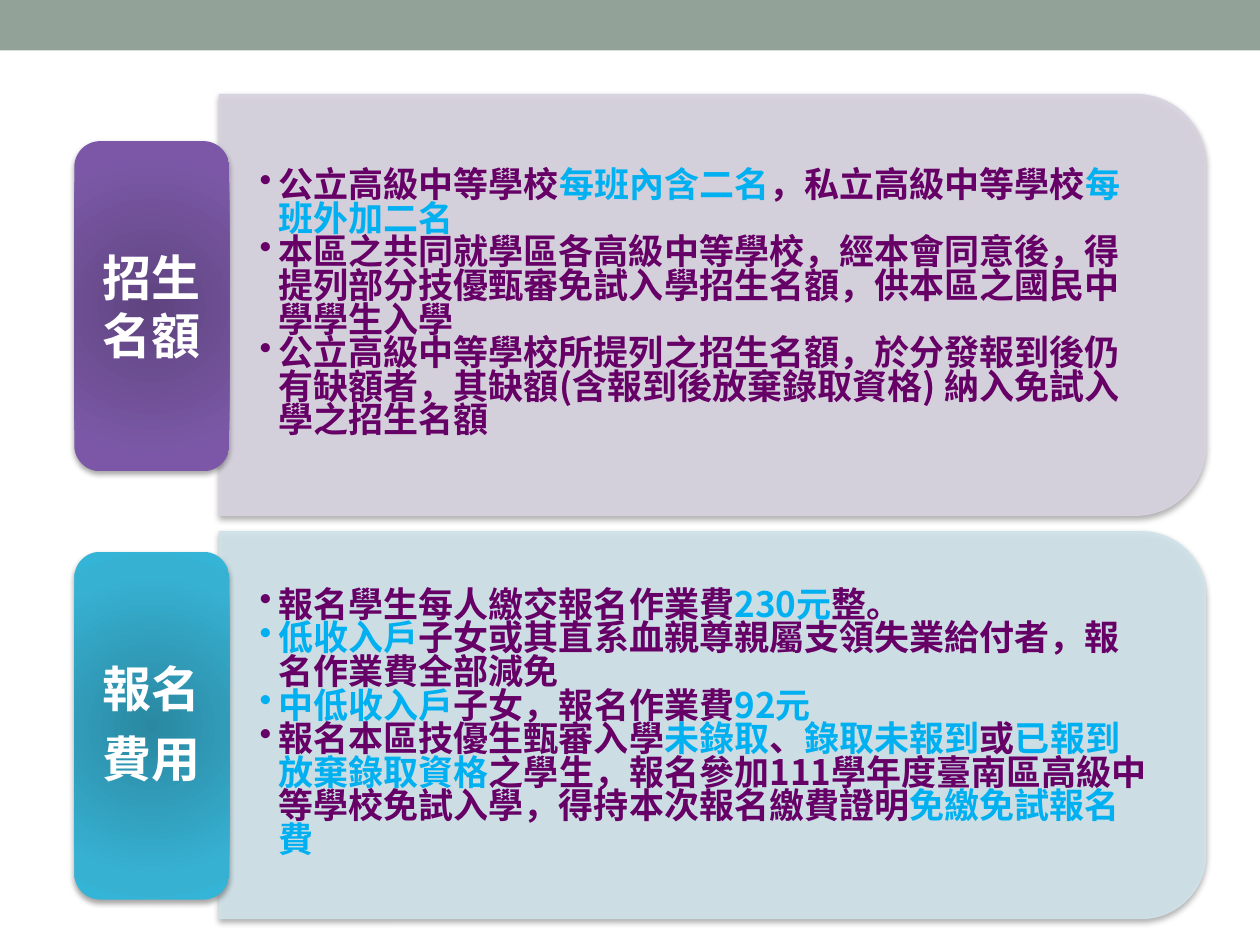
from pptx import Presentation
from pptx.dml.color import RGBColor
from pptx.enum.shapes import MSO_SHAPE
from pptx.enum.text import MSO_ANCHOR, PP_ALIGN
from pptx.oxml import parse_xml
from pptx.oxml.ns import nsdecls, qn
from pptx.util import Inches, Pt

RECTANGLE = MSO_SHAPE.RECTANGLE
ROUNDED = MSO_SHAPE.ROUNDED_RECTANGLE
TOP_ROUNDED = MSO_SHAPE.ROUND_2_SAME_RECTANGLE
MIDDLE = MSO_ANCHOR.MIDDLE
CENTER = PP_ALIGN.CENTER
FONT = "Noto Sans CJK SC"
PLUM, SKY, WHITE = "660066", "00B0F0", "FFFFFF"


def color(value):
    return RGBColor.from_string(value)


def add_text(page, area, inset, paragraphs, size, formats, bulleted=False):
    """Add a text box; each paragraph is a list of (text, colour) spans."""
    box = page.shapes.add_textbox(*map(Inches, area))
    frame = box.text_frame
    frame_format = {
        "word_wrap": True, "vertical_anchor": MIDDLE,
        "margin_left": Inches(inset), "margin_right": Inches(inset),
        "margin_top": Inches(inset / 2), "margin_bottom": Inches(inset / 2),
    }
    for name, value in frame_format.items():
        setattr(frame, name, value)
    for index, spans in enumerate(paragraphs):
        para = frame.add_paragraph() if index else frame.paragraphs[0]
        for name, value in formats.items():
            setattr(para, name, value)
        if bulleted:
            props = para._p.get_or_add_pPr()
            props.set("marL", str(Inches(0.19)))
            props.set("indent", str(Inches(-0.15)))
            props.append(parse_xml(f'<a:buChar {nsdecls("a")} char="•"/>'))
        for text, tone in spans:
            span = para.add_run()
            span.text = text
            for name, value in {"name": FONT, "size": Pt(size), "bold": True}.items():
                setattr(span.font, name, value)
            span.font.color.rgb = color(tone)
            span._r.rPr.append(parse_xml(f'<a:ea {nsdecls("a")} typeface="{FONT}"/>'))


deck = Presentation()
deck.slide_width, deck.slide_height = Inches(10), Inches(7.5)
page = deck.slides.add_slide(deck.slide_layouts[6])

# Top band
band = page.shapes.add_shape(RECTANGLE, 0, 0, Inches(10), Inches(0.4))
band.shadow.inherit = False
band.fill.solid()
band.fill.fore_color.rgb = color("93A299")
band.line.fill.background()

# Two sections: a tinted panel with bullets and a gradient label
sections = [
    {
        "panel_top": 0.75, "panel_height": 3.34, "tint": "D8D3E0",
        "text_area": (1.75, 0.92, 7.67, 3.01),
        "label_top": 1.12, "label_height": 2.62,
        "stops": [(0, "5F4480"), (80, "7B58A6"), (100, "7C57A8")],
        "label": ["招生", "名額"],
        "label_format": {"alignment": CENTER, "line_spacing": Pt(33)},
        "bullets": [
            [("公立高級中等學校", PLUM), ("每班內含二名", SKY),
             ("，私立高級中等學校", PLUM), ("每班外加二名", SKY)],
            [("本區之共同就學區各高級中等學校，經本會同意後，得提列部分技優甄審"
              "免試入學招生名額，供本區之國民中學學生入學", PLUM)],
            [("公立高級中等學校所提列之招生名額，於分發報到後仍有缺額者，其缺額"
              "(含報到後放棄錄取資格) 納入免試入學之招生名額", PLUM)],
        ],
    },
    {
        "panel_top": 4.22, "panel_height": 3.07, "tint": "D0E3EA",
        "text_area": (1.75, 4.37, 7.68, 2.77),
        "label_top": 4.38, "label_height": 2.76,
        "stops": [(0, "2A88A2"), (80, "37B1D2"), (100, "34B4D6")],
        "label": ["報名", "費用"],
        "label_format": {"alignment": CENTER, "line_spacing": Pt(30),
                         "space_after": Pt(10)},
        "bullets": [
            [("報名學生每人繳交報名作業費", PLUM), ("230元", SKY), ("整。", PLUM)],
            [("低收入戶", SKY),
             ("子女或其直系血親尊親屬支領失業給付者，報名作業費全部減免", PLUM)],
            [("中低收入戶", SKY), ("子女，報名作業費", PLUM), ("92元", SKY)],
            [("報名本區技優生甄審入學", PLUM), ("未錄取", SKY), ("、", PLUM),
             ("錄取未報到", SKY), ("或", PLUM), ("已報到放棄錄取資格", SKY),
             ("之學生，報名參加111學年度臺南區高級中等學校免試入學，"
              "得持本次報名繳費證明", PLUM), ("免繳免試報名費", SKY)],
        ],
    },
]
panel_left, panel_width = 1.74, 7.83
label_left, label_width, label_pad = 0.59, 1.23, 0.06

for section in sections:
    # Panel: a top-rounded shape turned a quarter, so its round side faces right
    height = section["panel_height"]
    shift = (panel_width - height) / 2
    panel = page.shapes.add_shape(
        TOP_ROUNDED, Inches(panel_left + shift), Inches(section["panel_top"] - shift),
        Inches(height), Inches(panel_width))
    panel.rotation = 90
    panel.fill.solid()
    panel.fill.fore_color.rgb = color(section["tint"])
    panel.line.color.rgb = color(section["tint"])
    panel.line.width = Pt(0.75)
    for tint in panel._element.spPr.iter(qn("a:srgbClr")):
        tint.append(parse_xml(f'<a:alpha {nsdecls("a")} val="90000"/>'))

    add_text(page, section["text_area"], 0.27, section["bullets"], 20,
             {"line_spacing": Pt(19.2)}, bulleted=True)

    # Label with a radial gradient
    top, height = section["label_top"], section["label_height"]
    label = page.shapes.add_shape(
        ROUNDED, Inches(label_left), Inches(top), Inches(label_width), Inches(height))
    label.line.fill.background()
    label.fill.gradient()
    gradient = label._element.spPr.find(qn("a:gradFill"))
    stops = "".join(f'<a:gs pos="{at * 1000}"><a:srgbClr val="{tone}"/></a:gs>'
                    for at, tone in section["stops"])
    label._element.spPr.replace(gradient, parse_xml(
        f'<a:gradFill {nsdecls("a")} rotWithShape="1"><a:gsLst>{stops}</a:gsLst>'
        '<a:path path="circle"><a:fillToRect l="50000" t="50000" r="50000" b="50000"/>'
        '</a:path></a:gradFill>'))

    add_text(page, (label_left + label_pad, top + label_pad,
                    label_width - 2 * label_pad, height - 2 * label_pad),
             0.12, [[(line, WHITE)] for line in section["label"]], 28,
             section["label_format"])

    # Soft shadow below both shapes
    for shape in (panel, label):
        shape.shadow.inherit = False
        shape._element.spPr.find(qn("a:effectLst")).append(parse_xml(
            f'<a:outerShdw {nsdecls("a")} blurRad="{Pt(3.1)}" dist="{Pt(1.8)}" '
            'dir="5400000" rotWithShape="0"><a:srgbClr val="000000">'
            '<a:alpha val="35000"/></a:srgbClr></a:outerShdw>'))

deck.save("out.pptx")
